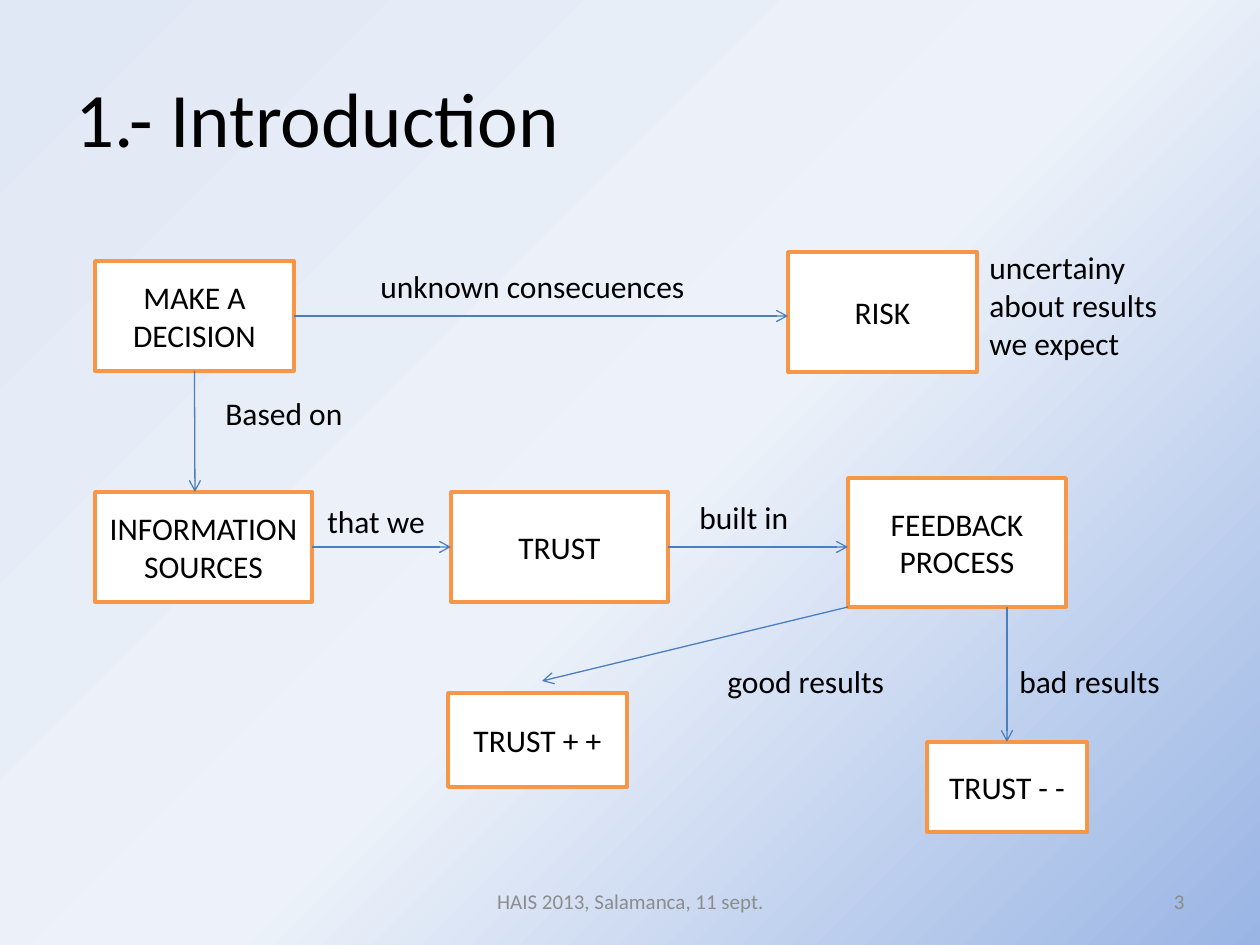
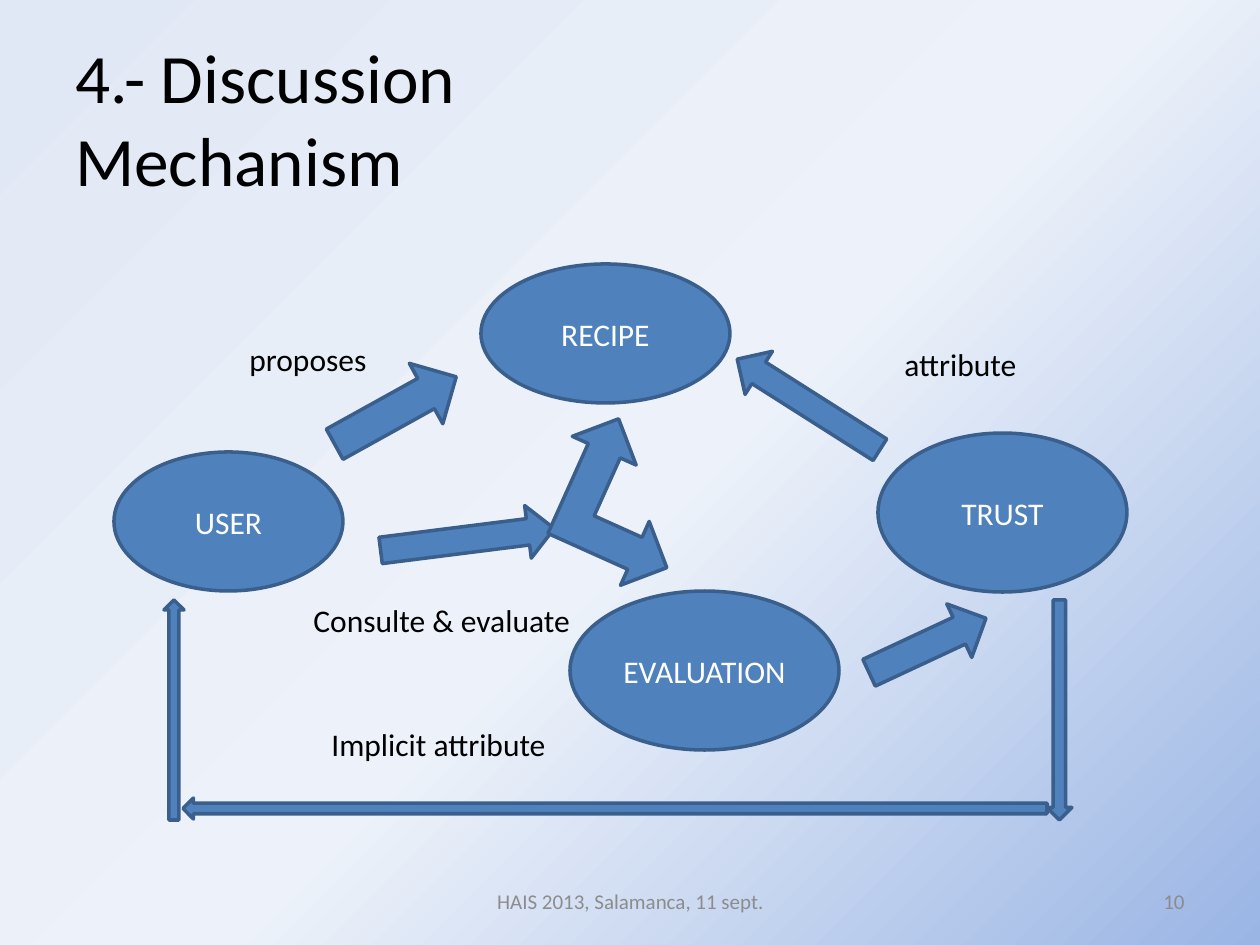
"""Build two diagram slides: the trust introduction and the discussion mechanism."""
import pptx
import pptx.dml.color
import pptx.enum.shapes
import pptx.enum.text
import pptx.oxml
import pptx.oxml.ns
import pptx.util

RGBColor = pptx.dml.color.RGBColor
SHAPE = pptx.enum.shapes.MSO_SHAPE
ALIGN = pptx.enum.text.PP_ALIGN
ANCHOR = pptx.enum.text.MSO_ANCHOR

BLACK = RGBColor(0x00, 0x00, 0x00)
WHITE = RGBColor(0xFF, 0xFF, 0xFF)
GRAY = RGBColor(0x8C, 0x8C, 0x8C)
ORANGE = RGBColor(0xF7, 0x96, 0x46)
BLUE = RGBColor(0x4F, 0x81, 0xBD)
DARK_BLUE = RGBColor(0x3A, 0x5F, 0x8C)
LINE_BLUE = RGBColor(0x4B, 0x7E, 0xBC)
BACKGROUND_STOPS = [
    (0, RGBColor(0x9A, 0xB5, 0xE4)),
    (47, RGBColor(0xED, 0xF2, 0xFA)),
    (100, RGBColor(0xE1, 0xE8, 0xF5)),
]

FONT = "Calibri"
PX_PER_INCH = 126
TOP, LEFT, BOTTOM, RIGHT = range(4)

TITLE_FRAME = (63, 38, 1134, 158)
FOOTER_FRAME = (431, 876, 399, 50)
NUMBER_FRAME = (903, 876, 294, 50)
FOOTER = "HAIS 2013, Salamanca, 11 sept."

INTRODUCTION = {
    "title": ["1.- Introduction"],
    "title_size": 44,
    "number": "3",
    "node_style": (SHAPE.RECTANGLE, WHITE, ORANGE, BLACK),
    "nodes": {
        "decision": ("MAKE A DECISION", (95, 261, 199, 110)),
        "risk": ("RISK", (788, 252, 189, 120)),
        "sources": ("INFORMATION SOURCES", (95, 492, 217, 110)),
        "trust": ("TRUST", (451, 492, 217, 110)),
        "feedback": ("FEEDBACK PROCESS", (848, 478, 218, 129)),
        "more trust": ("TRUST + +", (448, 693, 179, 94)),
        "less trust": ("TRUST - -", (927, 742, 160, 90)),
    },
    "labels": [
        (["uncertainy about results", "we expect"], (977, 242, 219, 127)),
        (["unknown consecuences"], (368, 261, 348, 50)),
        (["Based on"], (213, 388, 166, 50)),
        (["that we"], (315, 496, 135, 50)),
        (["built in"], (687, 492, 125, 50)),
        (["bad results"], (1007, 656, 189, 50)),
        (["good results"], (715, 656, 189, 50)),
    ],
    "links": [
        (("decision", RIGHT), (788, 316)),
        (("decision", BOTTOM), (195, 492)),
        (("sources", RIGHT), ("trust", LEFT)),
        (("trust", RIGHT), (848, 547)),
        ((848, 607), (542, 681)),
        ((1007, 607), ("less trust", TOP)),
    ],
    "arrows": [],
}

MECHANISM = {
    "title": ["4.- Discussion", "Mechanism"],
    "title_size": 39.6,
    "number": "10",
    "node_style": (SHAPE.OVAL, BLUE, DARK_BLUE, WHITE),
    "nodes": {
        "user": ("USER", (114, 452, 229, 139)),
        "recipe": ("RECIPE", (481, 264, 249, 139)),
        "evaluation": ("EVALUATION", (570, 591, 269, 159)),
        "trust": ("TRUST", (878, 433, 249, 159)),
    },
    "labels": [
        (["proposes"], (237, 334, 144, 50)),
        (["Consulte & evaluate"], (301, 595, 284, 50)),
        (["attribute"], (892, 339, 180, 50)),
        (["Implicit attribute"], (319, 719, 268, 50)),
    ],
    "links": [],
    "arrows": [
        (SHAPE.RIGHT_ARROW, (326, 376, 139, 69), 331),
        (SHAPE.RIGHT_ARROW, (380, 513, 175, 53), 352.8),
        (SHAPE.LEFT_UP_ARROW, (544, 432, 151, 140), 114.2),
        (SHAPE.LEFT_ARROW, (724, 379, 169, 51), 32.4),
        (SHAPE.LEFT_ARROW, (863, 616, 129, 59), 155),
        (SHAPE.DOWN_ARROW, (1047, 600, 25, 220), 0),
        (SHAPE.LEFT_ARROW, (183, 798, 864, 21), 0),
        (SHAPE.UP_ARROW, (164, 600, 20, 220), 0),
    ],
}


def emu(*lengths):
    return [round(length * pptx.util.Inches(1) / PX_PER_INCH) for length in lengths]


def add_run(paragraph, text, size, color):
    run = paragraph.add_run()
    run.text = text
    run.font.name = FONT
    run.font.size = pptx.util.Pt(size)
    run.font.color.rgb = color


def add_text(slide, lines, frame, size=18, color=BLACK, align=ALIGN.LEFT, anchor=ANCHOR.TOP):
    text_frame = slide.shapes.add_textbox(*emu(*frame)).text_frame
    text_frame.word_wrap = True
    text_frame.vertical_anchor = anchor
    for index, line in enumerate(lines):
        paragraph = text_frame.add_paragraph() if index else text_frame.paragraphs[0]
        paragraph.alignment = align
        add_run(paragraph, line, size, color)


def add_filled_shape(slide, kind, frame, fill, line):
    shape = slide.shapes.add_shape(kind, *emu(*frame))
    shape.shadow.inherit = False
    shape.fill.solid()
    shape.fill.fore_color.rgb = fill
    shape.line.color.rgb = line
    shape.line.width = pptx.util.Pt(2)
    return shape


def add_node(slide, style, text, frame):
    kind, fill, line, color = style
    shape = add_filled_shape(slide, kind, frame, fill, line)
    shape.text_frame.word_wrap = True
    shape.text_frame.vertical_anchor = ANCHOR.MIDDLE
    paragraph = shape.text_frame.paragraphs[0]
    paragraph.alignment = ALIGN.CENTER
    add_run(paragraph, text, 18, color)
    return shape


def add_link(slide, nodes, start, end):
    points = [(0, 0) if place[0] in nodes else place for place in (start, end)]
    connector = slide.shapes.add_connector(
        pptx.enum.shapes.MSO_CONNECTOR.STRAIGHT, *emu(*points[0], *points[1]))
    for place, connect in ((start, connector.begin_connect), (end, connector.end_connect)):
        if place[0] in nodes:
            connect(nodes[place[0]], place[1])
    connector.line.color.rgb = LINE_BLUE
    connector.line.width = pptx.util.Pt(0.75)
    properties = connector.element.spPr
    outline = properties.find(pptx.oxml.ns.qn("a:ln"))
    for parent, tag in ((outline, "a:tailEnd"), (properties, "a:effectLst")):
        parent.append(pptx.oxml.parse_xml(f"<{tag} {pptx.oxml.ns.nsdecls('a')}/>"))
    outline[-1].set("type", "arrow")


def set_background(slide):
    stops = "".join(
        f'<a:gs pos="{position * 1000}"><a:srgbClr val="{color}"/></a:gs>'
        for position, color in BACKGROUND_STOPS)
    slide.element.cSld.insert(0, pptx.oxml.parse_xml(
        f'<p:bg {pptx.oxml.ns.nsdecls("p", "a")}><p:bgPr>'
        f'<a:gradFill rotWithShape="1"><a:gsLst>{stops}</a:gsLst>'
        '<a:path path="circle"><a:fillToRect l="100000" t="100000"/></a:path>'
        '<a:tileRect r="-100000" b="-100000"/></a:gradFill>'
        '<a:effectLst/></p:bgPr></p:bg>'))


def build_slide(presentation, content):
    slide = presentation.slides.add_slide(presentation.slide_layouts[6])
    set_background(slide)
    add_text(slide, content["title"], TITLE_FRAME, content["title_size"], anchor=ANCHOR.MIDDLE)
    nodes = {name: add_node(slide, content["node_style"], text, frame)
             for name, (text, frame) in content["nodes"].items()}
    for start, end in content["links"]:
        add_link(slide, nodes, start, end)
    for lines, frame in content["labels"]:
        add_text(slide, lines, frame)
    for kind, frame, rotation in content["arrows"]:
        add_filled_shape(slide, kind, frame, BLUE, DARK_BLUE).rotation = rotation
    add_text(slide, [FOOTER], FOOTER_FRAME, 12, GRAY, ALIGN.CENTER, ANCHOR.MIDDLE)
    add_text(slide, [content["number"]], NUMBER_FRAME, 12, GRAY, ALIGN.RIGHT, ANCHOR.MIDDLE)


def main():
    presentation = pptx.Presentation()
    presentation.slide_width, presentation.slide_height = emu(1260, 945)
    for content in (INTRODUCTION, MECHANISM):
        build_slide(presentation, content)
    presentation.save("out.pptx")


if __name__ == "__main__":
    main()
